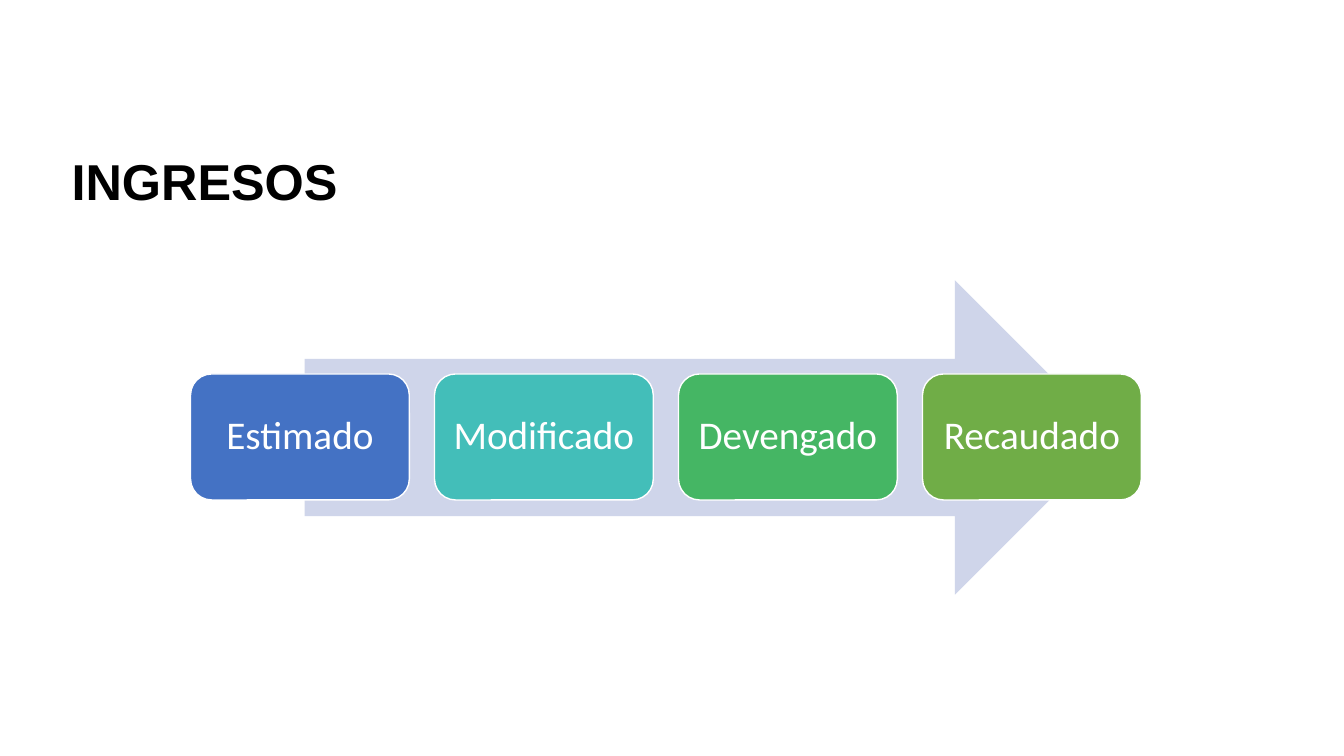
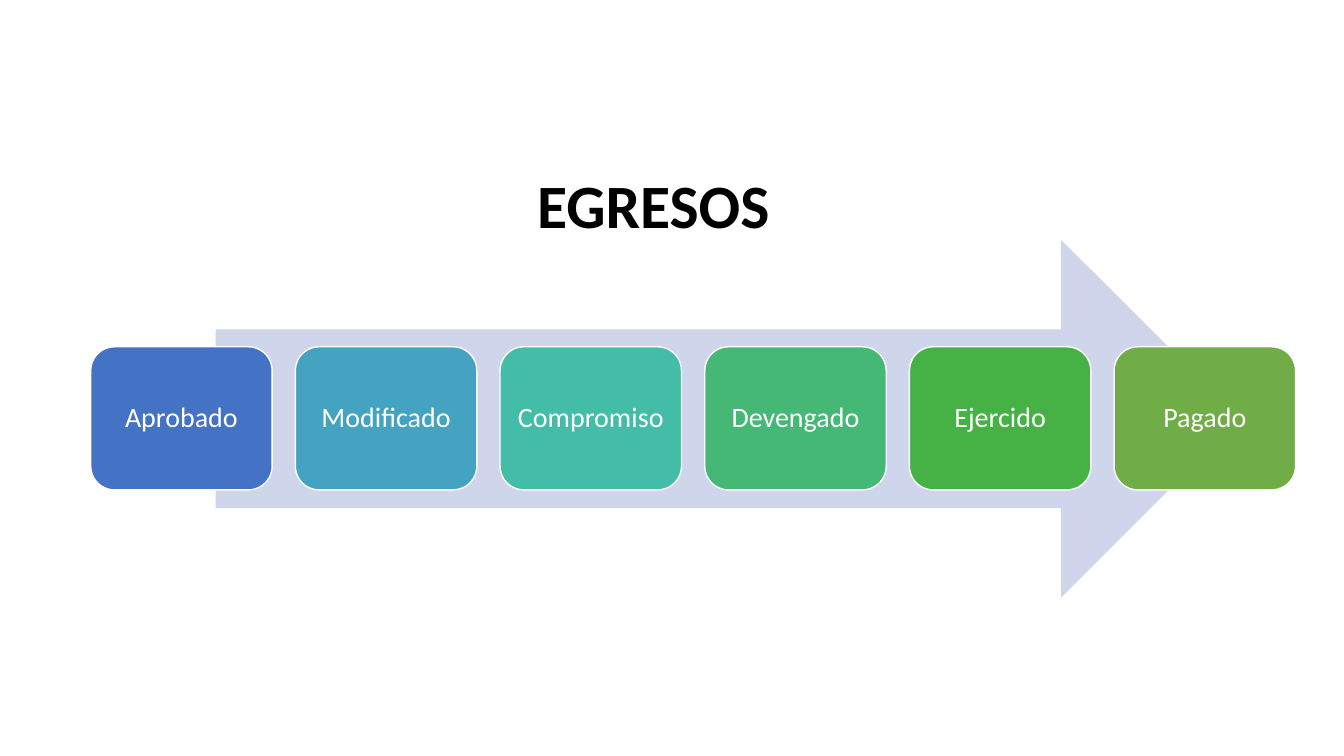
"""Build two slides that show the stages of income and spending as process arrows."""
import pptx
import pptx.dml.color
import pptx.enum.shapes
import pptx.enum.text
import pptx.util

PX = 9144
COLORS = {
    "text": "000000", "white": "FFFFFF", "arrow": "CFD5EA",
    "blue": "4472C4", "sky": "44A3C0", "turquoise": "43BEB9", "teal": "43BDA7",
    "jade": "44B874", "emerald": "45B664", "green": "46B246", "olive": "70AD47",
}
SHAPES = pptx.enum.shapes.MSO_SHAPE
ALIGN = pptx.enum.text.PP_ALIGN
ANCHOR = pptx.enum.text.MSO_ANCHOR


def color(name):
    return pptx.dml.color.RGBColor.from_string(COLORS[name])


def px(*lengths):
    return [pptx.util.Emu(length * PX) for length in lengths]


def write(frame, text, font, size, ink, align, bold=False):
    para = frame.paragraphs[0]
    para.alignment = align
    para.line_spacing = 0.9
    span = para.add_run()
    span.text = text
    span.font.name = font
    span.font.size = pptx.util.Pt(size)
    span.font.bold = bold
    span.font.color.rgb = color(ink)


def add_page(deck, title, area, font, size, align):
    page = deck.slides.add_slide(deck.slide_layouts[5])
    box = page.shapes.title
    box.left, box.top, box.width, box.height = px(*area)
    frame = box.text_frame
    frame.auto_size = pptx.enum.text.MSO_AUTO_SIZE.NONE
    frame.vertical_anchor = ANCHOR.TOP
    write(frame, title, font, size, "text", align, bold=True)
    return page


def add_shape(page, kind, area, fill):
    shape = page.shapes.add_shape(kind, *px(*area))
    shape.shadow.inherit = False
    shape.fill.solid()
    shape.fill.fore_color.rgb = color(fill)
    shape.line.fill.background()
    return shape


def add_stage(page, area, text, fill, size):
    stage = add_shape(page, SHAPES.ROUNDED_RECTANGLE, area, fill)
    stage.line.color.rgb = color("white")
    stage.line.width = pptx.util.Pt(1)
    frame = stage.text_frame
    frame.word_wrap = True
    frame.vertical_anchor = ANCHOR.MIDDLE
    frame.margin_left, frame.margin_right = px(5, 5)
    write(frame, text, "Calibri", size, "white", ALIGN.CENTER)


def add_process(page, arrow, first, pitch, size, stages):
    add_shape(page, SHAPES.RIGHT_ARROW, arrow, "arrow")
    left, top, width, height = first
    for index, (text, fill) in enumerate(stages):
        area = (left + index * pitch, top, width, height)
        add_stage(page, area, text, fill, size)


def main():
    deck = pptx.Presentation()
    deck.slide_width, deck.slide_height = px(1333, 750)

    income = add_page(deck, "INGRESOS", (61, 151, 401, 78), "Arial", 36, ALIGN.LEFT)
    add_process(income, (302, 278, 801, 312), (189, 371, 217, 125), 242, 28, [
        ("Estimado", "blue"), ("Modificado", "turquoise"),
        ("Devengado", "emerald"), ("Recaudado", "olive"),
    ])

    spending = add_page(deck, "EGRESOS ", (80, 169, 1150, 69), "Calibri", 44, ALIGN.CENTER)
    add_process(spending, (214, 238, 1016, 355), (90, 344, 180, 142), 203, 20, [
        ("Aprobado", "blue"), ("Modificado", "sky"), ("Compromiso", "teal"),
        ("Devengado", "jade"), ("Ejercido", "green"), ("Pagado", "olive"),
    ])

    deck.save("out.pptx")


if __name__ == "__main__":
    main()
